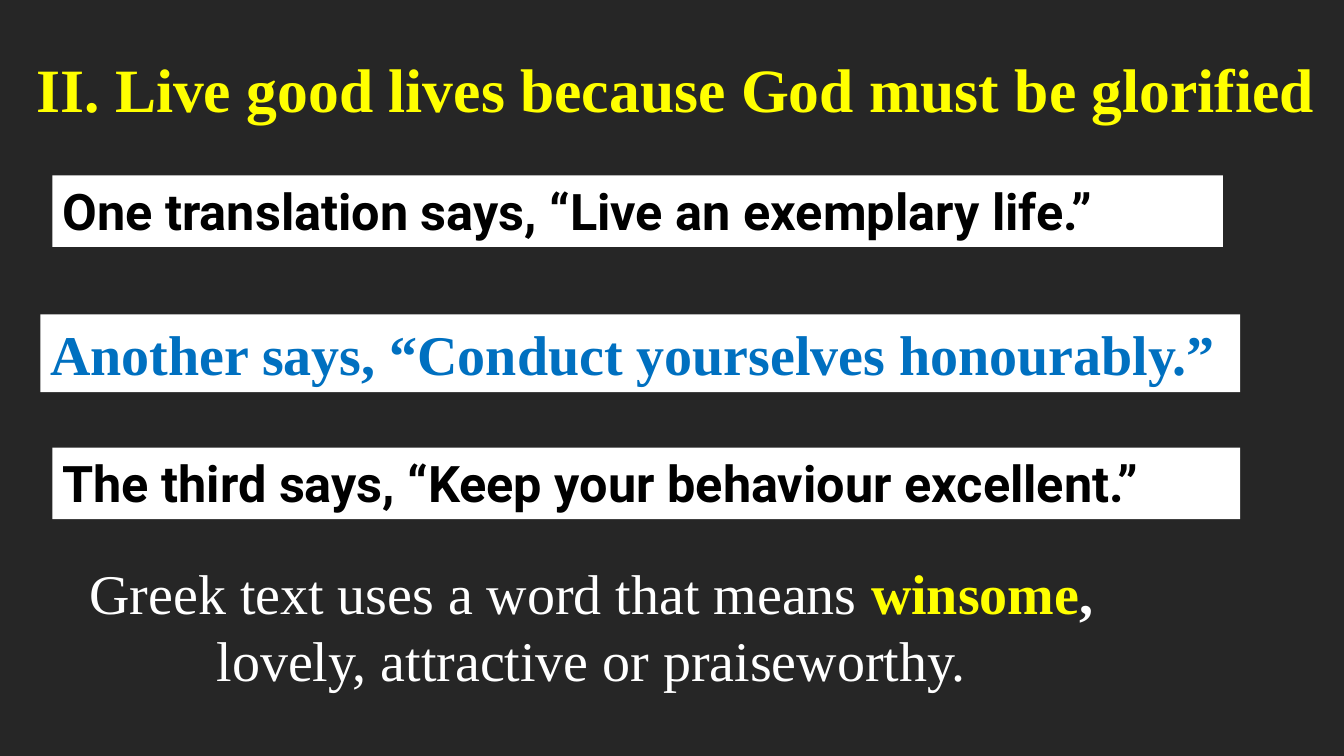
from dataclasses import dataclass

import pptx
import pptx.dml.color
import pptx.enum.shapes
import pptx.enum.text
import pptx.util

Inches = pptx.util.Inches
Align = pptx.enum.text.PP_ALIGN

COLORS = {
    "background": "262626",
    "white": "FFFFFF",
    "black": "000000",
    "yellow": "FFFF00",
    "blue": "0070C0",
}
SERIF, SANS = "Times New Roman", "Roboto"


@dataclass
class Phrase:
    text: str
    color: str
    size: int
    font: str = SERIF
    bold: bool = True


@dataclass
class Quote:
    left: float
    top: float
    width: float
    height: float
    phrase: Phrase


HEADING = Phrase("II. Live good lives because God must be glorified", "yellow", 44)

QUOTES = [
    Quote(0.52, 1.74, 11.61, 0.71,
          Phrase("One translation says, “Live an exemplary life.” ", "black", 36, SANS)),
    Quote(0.40, 3.12, 11.90, 0.77,
          Phrase("Another says, “Conduct yourselves honourably.”", "blue", 40)),
    Quote(0.52, 4.44, 11.78, 0.71,
          Phrase("The third says, “Keep your behaviour excellent.”", "black", 36, SANS)),
]

GREEK_MEANING = [
    [
        Phrase("Greek text uses a word that means ", "white", 40, bold=False),
        Phrase("winsome", "yellow", 40),
        Phrase(", ", "white", 40),
    ],
    [Phrase("lovely, attractive or praiseworthy. ", "white", 40, bold=False)],
]


def rgb(name: str) -> pptx.dml.color.RGBColor:
    return pptx.dml.color.RGBColor.from_string(COLORS[name])


def write(frame: pptx.text.text.TextFrame, lines: list[list[Phrase]],
          alignment: Align, wrap: bool) -> None:
    frame.word_wrap = wrap
    frame.auto_size = pptx.enum.text.MSO_AUTO_SIZE.SHAPE_TO_FIT_TEXT
    frame.vertical_anchor = pptx.enum.text.MSO_ANCHOR.TOP
    for index, phrases in enumerate(lines):
        paragraph = frame.add_paragraph() if index else frame.paragraphs[0]
        paragraph.alignment = alignment
        for phrase in phrases:
            run = paragraph.add_run()
            run.text = phrase.text
            run.font.name = phrase.font
            run.font.size = pptx.util.Pt(phrase.size)
            run.font.bold = phrase.bold
            run.font.color.rgb = rgb(phrase.color)


def add_quote(slide: pptx.slide.Slide, quote: Quote) -> None:
    bar = slide.shapes.add_shape(
        pptx.enum.shapes.MSO_SHAPE.RECTANGLE,
        Inches(quote.left), Inches(quote.top), Inches(quote.width), Inches(quote.height))
    bar.shadow.inherit = False
    bar.fill.solid()
    bar.fill.fore_color.rgb = rgb("white")
    bar.line.fill.background()
    write(bar.text_frame, [[quote.phrase]], Align.JUSTIFY, wrap=True)


def main() -> None:
    deck = pptx.Presentation()
    deck.slide_width, deck.slide_height = Inches(13.33), Inches(7.5)
    slide = deck.slides.add_slide(deck.slide_layouts.get_by_name("Title Only"))
    slide.background.fill.solid()
    slide.background.fill.fore_color.rgb = rgb("background")

    # Heading
    heading = slide.shapes.title
    heading.left, heading.top = Inches(0.26), Inches(0.46)
    heading.width, heading.height = Inches(13.01), Inches(0.84)
    write(heading.text_frame, [[HEADING]], Align.LEFT, wrap=False)

    # Translations on white bars
    for quote in QUOTES:
        add_quote(slide, quote)

    # Meaning of the Greek word
    meaning = slide.shapes.add_textbox(
        Inches(0.73), Inches(5.49), Inches(10.41), Inches(1.45))
    write(meaning.text_frame, GREEK_MEANING, Align.CENTER, wrap=False)

    deck.save("out.pptx")


if __name__ == "__main__":
    main()
